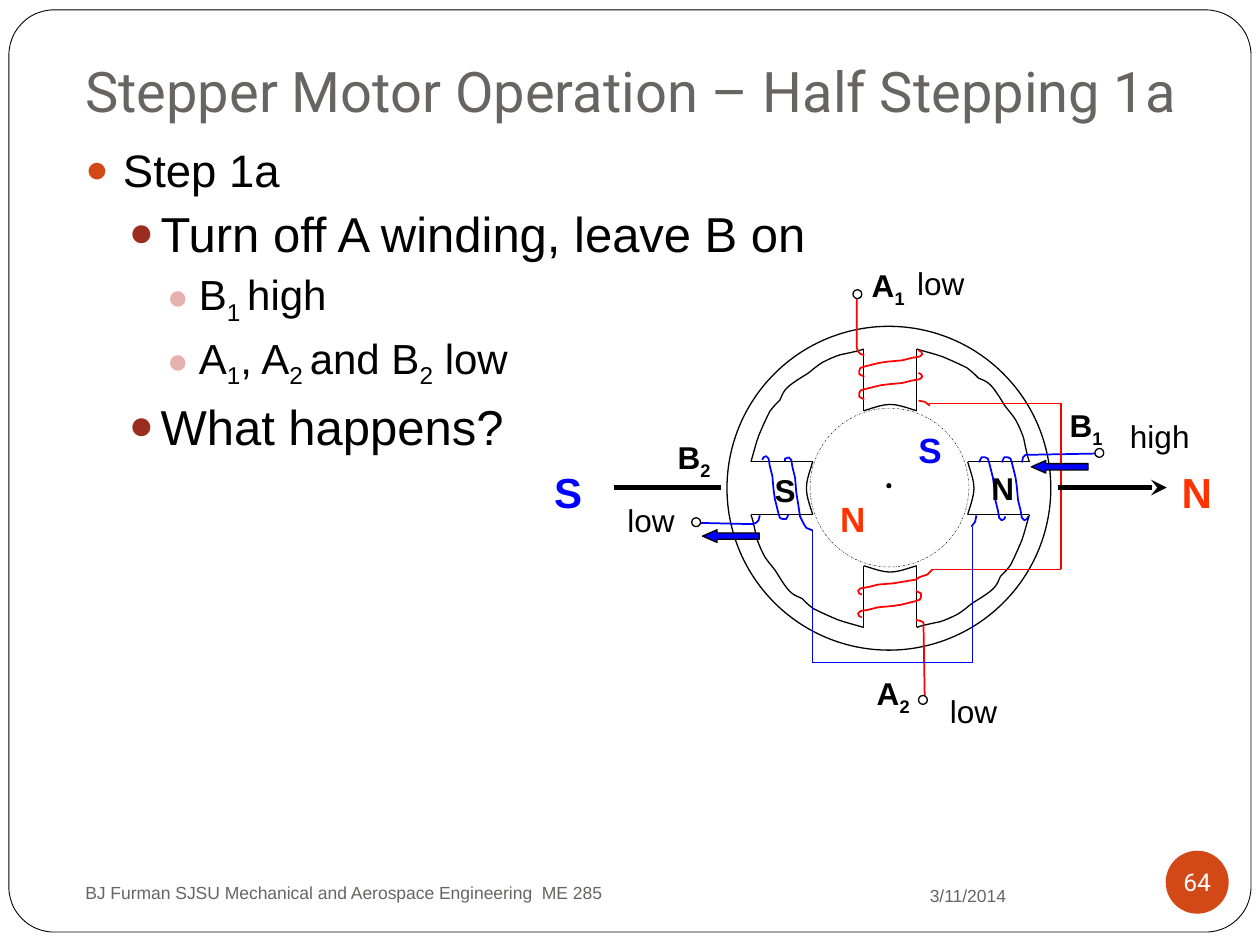
from lxml import etree
from pptx import Presentation
from pptx.dml.color import RGBColor
from pptx.enum.dml import MSO_LINE
from pptx.enum.shapes import MSO_CONNECTOR, MSO_SHAPE
from pptx.enum.text import MSO_ANCHOR, PP_ALIGN
from pptx.oxml.ns import qn
from pptx.util import Cm, Pt

STRAIGHT = MSO_CONNECTOR.STRAIGHT
ELLIPSE, ROUNDED, LEFT_ARROW = MSO_SHAPE.OVAL, MSO_SHAPE.ROUNDED_RECTANGLE, MSO_SHAPE.LEFT_ARROW
TOP, MIDDLE, BOTTOM = MSO_ANCHOR.TOP, MSO_ANCHOR.MIDDLE, MSO_ANCHOR.BOTTOM
LEFT, CENTER, RIGHT = PP_ALIGN.LEFT, PP_ALIGN.CENTER, PP_ALIGN.RIGHT
DASH_DOT = MSO_LINE.DASH_DOT
BLACK, WHITE, RED, BLUE = "000000", "FFFFFF", "FF0000", "0000FF"
GRAY, ORANGE, NORTH = "696464", "D34817", "FF3300"

GRID_CM = 0.0254
CENTER_X, CENTER_Y = 706.5, 387.5

POLE_SIDE = [(-21, -110.5), (-21, -61.5)]
POLE_TIP = [(-21, -61.5), (-14, -63.5), (-7, -66.5), (0, -66.5),
            (7, -66.5), (14, -63.5), (21, -61.5)]
SLOT = [(21, -110.5), (31, -107.5), (40, -105.5), (46, -102.5),
        (53, -99.5), (57, -97.5), (61, -95.5), (65, -92.5), (67, -90.5), (70, -87.5),
        (74, -85.5), (76, -85.5), (80, -81.5), (83, -78.5), (88, -70.5), (91, -65.5),
        (94, -61.5), (97, -58.5), (100, -53.5), (102, -49.5), (104, -45.5), (106, -39.5),
        (107, -34.5), (109, -24.5), (110.5, -21)]
COIL_LOOP = [(-20.5, -88.5), (-24.5, -90.5), (-24.5, -93.5), (-23.5, -95.5),
             (-20.5, -96.5), (-8.5, -99.5), (-1.5, -100.5), (9.5, -101.5),
             (17.5, -103.5), (23.5, -104.5), (25.5, -106.5), (24.5, -108.5), (22.5, -109.5)]
LOOPS = [(0, 0, RED), (0, 18, RED), (1, 0, BLUE), (1, 18, BLUE), (2, 7, RED), (3, 8, BLUE)]
LEADS = [
    (BLUE, [(870, 360), (817, 361), (814, 361), (812, 363), (811, 367)]),
    (BLUE, [(775, 409), (774, 414), (771, 418)]),
    (BLUE, [(645, 421), (640, 419), (638, 416), (636, 412), (635, 410), (633, 397), (632, 391),
            (631, 379), (629, 371), (628, 365), (626, 363), (623, 364), (623, 366)]),
    (BLUE, [(554, 415), (597, 416), (600, 415), (602, 413), (603, 409)]),
    (RED, [(740, 452), (736, 456), (733, 457), (730, 458), (727, 460), (715, 462), (709, 463),
           (697, 464), (689, 466), (683, 467), (681, 469), (682, 471), (684, 472)]),
    (RED, [(734, 558), (733, 497), (733, 494), (731, 493), (727, 492)]),
    (RED, [(680, 235), (680, 276), (681, 279), (683, 281), (686, 282)]),
    (RED, [(729, 318), (734, 319), (738, 322)]),
]
LINKS = [(RED, [(737, 320), (842, 320), (842, 452), (740, 452)]),
         (BLUE, [(772, 418), (772, 526), (645, 526), (645, 421)])]
TERMINALS = [(677, 230), (869, 356), (729, 552), (549, 411)]
POLE_LABELS = [("A_1", 682, 206), ("B_1", 839, 317), ("A_2", 686, 530),
               ("B_2", 528, 343), ("N", 777, 367), ("S", 605, 369)]
LEVELS = [("low", 744, 544), ("low", 718, 205), ("low", 488, 393), ("high", 887, 326)]
FIELD_LABELS = [("N", 928, 365, 24, NORTH), ("S", 430, 365, 24, BLUE),
                ("N", 657, 390, 20, NORTH), ("S", 719, 335, 20, BLUE)]
BULLET_LEVELS = [(0.76, 0.76, ORANGE, 26, 5.8), (1.52, 0.64, "9B2D1F", 28, 3.7),
                 (2.29, 0.64, "E6B1AC", 24, 3.7)]
BULLETS = [(0, "Step 1a"), (1, "Turn off A winding, leave B on"), (2, "B_1 _high"),
           (2, "A_1_, A_2 _and B_2_ low"), (1, "What happens?")]


def color(value):
    return RGBColor.from_string(value)


def page(*values):
    return [Cm(value) for value in values]


def grid(*values):
    return [Cm(value * GRID_CM) for value in values]


def turned(points, turns):
    for _ in range(turns):
        points = [(-y, x) for x, y in points]
    return [(CENTER_X + x, CENTER_Y + y) for x, y in points]


def smooth_curve(points, steps=5):
    result = points[:1]
    for index in range(0, len(points) - 1, 3):
        controls = points[index:index + 4]
        for step in range(1, steps + 1):
            t = step / steps
            weights = ((1 - t) ** 3, 3 * t * (1 - t) ** 2, 3 * t * t * (1 - t), t ** 3)
            result.append(tuple(sum(weight * point[axis] for weight, point in zip(weights, controls))
                                for axis in (0, 1)))
    return result


def style(shape, fill, line, width):
    shape.shadow.inherit = False
    if fill:
        shape.fill.solid()
        shape.fill.fore_color.rgb = color(fill)
    else:
        shape.fill.background()
    if line:
        shape.line.color.rgb = color(line)
        shape.line.width = Pt(width)
    else:
        shape.line.fill.background()
    return shape


def add_shape(slide, kind, box, fill=None, line=BLACK, width=0.75):
    return style(slide.shapes.add_shape(kind, *box), fill, line, width)


def add_path(slide, points, line=BLACK, width=0.75):
    corners = [grid(*point) for point in points]
    builder = slide.shapes.build_freeform(*corners[0], scale=1.0)
    builder.add_line_segments(corners[1:], close=False)
    return style(builder.convert_to_shape(), None, line, width)


def add_line(slide, start, end, line=BLACK, width=0.75, arrow=False):
    connector = slide.shapes.add_connector(STRAIGHT, *grid(*start, *end))
    connector.line.color.rgb = color(line)
    connector.line.width = Pt(width)
    if arrow:
        etree.SubElement(connector.line._get_or_add_ln(), qn("a:tailEnd"), type="stealth")
    etree.SubElement(connector._element.spPr, qn("a:effectLst"))


def write(paragraph, text, size, ink=BLACK, font="Arial", bold=False, align=LEFT):
    paragraph.alignment = align
    paragraph.font.size = Pt(size)
    paragraph.font.name = font
    paragraph.font.bold = bold
    paragraph.font.color.rgb = color(ink)
    for index, part in enumerate(text.split("_")):
        run = paragraph.add_run()
        run.text = part
        if index % 2:
            run._r.get_or_add_rPr().set("baseline", "-25000")


def add_text(slide, box, text, size, anchor=TOP, wrap=True, **options):
    frame = slide.shapes.add_textbox(*box).text_frame
    frame.word_wrap = wrap
    frame.vertical_anchor = anchor
    write(frame.paragraphs[0], text, size, **options)
    return frame


def add_bullets(slide, box):
    frame = slide.shapes.add_textbox(*box).text_frame
    frame.word_wrap = True
    for index, (level, text) in enumerate(BULLETS):
        paragraph = frame.add_paragraph() if index else frame.paragraphs[0]
        margin, hanging, ink, size, before = BULLET_LEVELS[level]
        paragraph.level = level
        properties = paragraph._p.get_or_add_pPr()
        properties.set("marL", str(Cm(margin)))
        properties.set("indent", str(-Cm(hanging)))
        bullet_color = etree.SubElement(properties, qn("a:buClr"))
        etree.SubElement(bullet_color, qn("a:srgbClr"), val=ink)
        etree.SubElement(properties, qn("a:buSzPct"), val="85000")
        etree.SubElement(properties, qn("a:buFont"), typeface="Arial")
        etree.SubElement(properties, qn("a:buChar"), char="●")
        if index:
            paragraph.space_before = Pt(before)
        write(paragraph, text, size)


def add_page_furniture(slide):
    frame = add_shape(slide, ROUNDED, page(0.18, 0.2, 25.04, 18.59), WHITE, width=0.5)
    frame.adjustments[0] = 0.049
    title = add_text(slide, page(1.47, 0.76, 22.66, 1.98),
                     "Stepper Motor Operation – Half Stepping 1a", 32, BOTTOM, ink=GRAY, font="Roboto")
    title.margin_bottom = Cm(0.25)
    add_text(slide, page(17.15, 17.68, 3.38, 0.74), "3/11/2014", 10, MIDDLE, ink=GRAY, align=RIGHT)
    add_text(slide, page(1.47, 17.58, 12.5, 0.84),
             "BJ Furman SJSU Mechanical and Aerospace Engineering  ME 285", 10, MIDDLE, ink=GRAY)
    badge = add_shape(slide, ELLIPSE, page(23.5, 17.15, 1.27, 1.27), ORANGE, None).text_frame
    badge.margin_left = badge.margin_right = badge.margin_top = badge.margin_bottom = 0
    badge.word_wrap = False
    badge.vertical_anchor = MIDDLE
    write(badge.paragraphs[0], "64", 14, ink=WHITE, font="Roboto", align=CENTER)


def add_motor(slide):
    add_shape(slide, ELLIPSE, grid(577, 259, 257, 257), WHITE)
    for turns in range(4):
        add_line(slide, *turned(POLE_SIDE, turns))
        add_line(slide, *turned([(-x, y) for x, y in POLE_SIDE], turns))
        add_path(slide, turned(smooth_curve(POLE_TIP), turns))
        add_path(slide, turned(smooth_curve(SLOT), turns))
    for turns, inset, ink in LOOPS:
        add_path(slide, turned([(x, y + inset) for x, y in COIL_LOOP], turns), ink, 1)
    for ink, points in LEADS:
        add_path(slide, points, ink, 1)
    for ink, points in LINKS:
        for start, end in zip(points, points[1:]):
            add_line(slide, start, end, ink)
    for left, top in TERMINALS:
        add_shape(slide, ELLIPSE, grid(left, top, 7, 7), WHITE)
    add_line(slide, (840, 387), (926, 387), width=3, arrow=True)
    add_line(slide, (487, 387), (572, 387), width=3)
    add_shape(slide, ELLIPSE, grid(704, 384, 3, 3), BLACK)
    add_shape(slide, ELLIPSE, grid(643, 324, 126, 126), width=0.25).line.dash_style = DASH_DOT
    for left, top in [(818.5, 365.5), (557.5, 420.5)]:
        arrow = add_shape(slide, LEFT_ARROW, grid(left, top, 45, 10), BLUE)
        arrow.adjustments[1] = 1.156


def add_motor_labels(slide):
    for text, left, top in POLE_LABELS:
        add_text(slide, grid(left, top, 58, 41), text, 18, bold=True)
    for text, left, top in LEVELS:
        add_text(slide, grid(left, top, 67 if text == "high" else 58, 40), text, 18, wrap=False)
    for text, left, top, size, ink in FIELD_LABELS:
        add_text(slide, grid(left, top, 42, 2 * size), text, size, wrap=False, ink=ink, bold=True)


def main():
    presentation = Presentation()
    presentation.slide_width, presentation.slide_height = page(25.4, 19.05)
    slide = presentation.slides.add_slide(presentation.slide_layouts[6])
    add_page_furniture(slide)
    add_bullets(slide, page(1.47, 2.74, 22.66, 13.97))
    add_motor(slide)
    add_motor_labels(slide)
    presentation.save("out.pptx")


if __name__ == "__main__":
    main()
